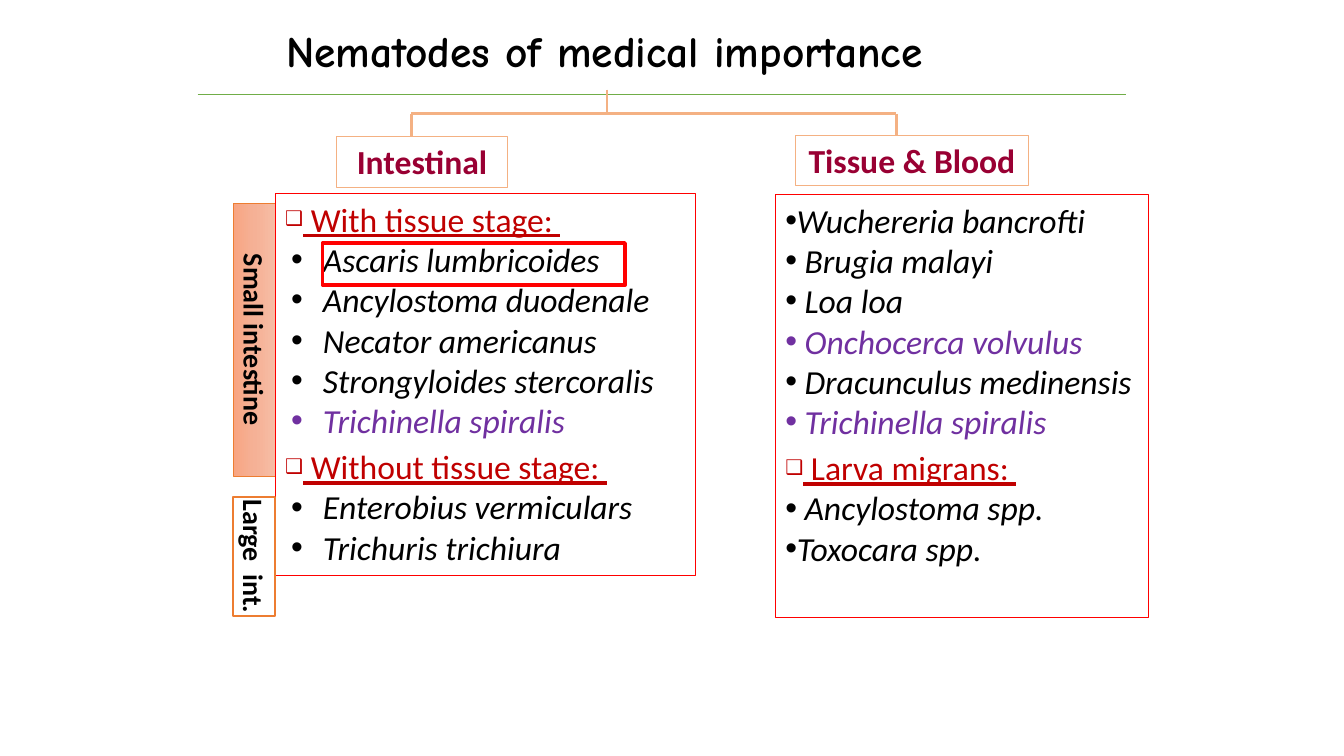
import copy

import pptx
import pptx.dml.color
import pptx.enum.shapes
import pptx.enum.text
import pptx.oxml
import pptx.oxml.ns
import pptx.util

Inches = pptx.util.Inches
Pt = pptx.util.Pt
RGBColor = pptx.dml.color.RGBColor
PP_ALIGN = pptx.enum.text.PP_ALIGN

BLACK = RGBColor(0x00, 0x00, 0x00)
RED = RGBColor(0xFF, 0x00, 0x00)
HEADING_RED = RGBColor(0xC0, 0x00, 0x00)
MAROON = RGBColor(0x99, 0x00, 0x33)
PURPLE = RGBColor(0x70, 0x30, 0xA0)
GREEN = RGBColor(0x70, 0xAD, 0x47)
PEACH = RGBColor(0xF4, 0xB1, 0x83)
ORANGE = RGBColor(0xED, 0x7D, 0x31)
SALMON_STOPS = [
    (0, RGBColor(0xF7, 0xBD, 0xA5)),
    (0.5, RGBColor(0xF5, 0xB1, 0x96)),
    (1, RGBColor(0xF8, 0xA5, 0x82)),
]

INTESTINAL = [
    ("heading", " With tissue stage: "),
    ("species", " Ascaris lumbricoides"),
    ("species", " Ancylostoma duodenale"),
    ("species", " Necator americanus"),
    ("species", " Strongyloides stercoralis"),
    ("shared", " Trichinella spiralis"),
    ("heading", " Without tissue stage: "),
    ("species", " Enterobius vermiculars"),
    ("species", " Trichuris trichiura"),
]
TISSUE_AND_BLOOD = [
    ("species", "Wuchereria bancrofti"),
    ("species", " Brugia malayi"),
    ("species", " Loa loa"),
    ("shared", " Onchocerca volvulus"),
    ("species", " Dracunculus medinensis"),
    ("shared", " Trichinella spiralis"),
    ("heading", " Larva migrans: "),
    ("species", " Ancylostoma spp."),
    ("species", "Toxocara spp."),
]
STYLES = {
    "heading": dict(color=HEADING_RED, underline=True),
    "species": dict(color=BLACK, italic=True),
    "shared": dict(color=PURPLE, italic=True),
}


def write(paragraph, text, size=24, font="Calibri", color=BLACK, bold=False,
          italic=False, underline=False, align=PP_ALIGN.LEFT):
    paragraph.alignment = align
    run = paragraph.add_run()
    run.text = text
    run.font.size = Pt(size)
    run.font.name = font
    run.font.color.rgb = color
    run.font.bold = bold
    run.font.italic = italic
    run.font.underline = underline


def add_line(slide, start, end, color, width):
    line = slide.shapes.add_connector(
        pptx.enum.shapes.MSO_CONNECTOR.STRAIGHT,
        *(Inches(value) for value in (*start, *end)))
    line.line.color.rgb = color
    line.line.width = Pt(width)
    properties = line._element.spPr
    properties.append(pptx.oxml.parse_xml(
        f"<a:effectLst {pptx.oxml.ns.nsdecls('a')}/>"))


def add_frame(slide, box, color, width):
    """Add an unfilled rectangle whose text starts at the top left."""
    frame = slide.shapes.add_shape(
        pptx.enum.shapes.MSO_SHAPE.RECTANGLE, *(Inches(value) for value in box))
    frame.shadow.inherit = False
    frame.fill.background()
    frame.line.color.rgb = color
    frame.line.width = Pt(width)
    frame.text_frame.word_wrap = True
    frame.text_frame.vertical_anchor = pptx.enum.text.MSO_ANCHOR.TOP
    return frame


def add_title(slide, box):
    left, top, width, height = box
    add_line(slide, (1.96, top + 0.75), (11.17, top + 0.75), GREEN, 1)
    title = slide.shapes.add_textbox(*(Inches(value) for value in box))
    title.text_frame.word_wrap = True
    write(title.text_frame.paragraphs[0], "Nematodes of medical importance",
          size=31, font="Comic Neue", bold=True)


def add_branches(slide, box, trunk):
    """Draw a trunk from the top of the box to a bar with a drop at each end."""
    left, top, width, height = box
    right, bottom, bar = left + width, top + height, top + 0.24
    for start, end in [
        ((trunk, top), (trunk, bar)),
        ((left, bar), (right, bar)),
        ((left, bar), (left, bottom)),
        ((right, bar), (right, bottom)),
    ]:
        add_line(slide, start, end, PEACH, 2)


def add_group_label(slide, box, text):
    label = add_frame(slide, box, PEACH, 0.75)
    write(label.text_frame.paragraphs[0], text, color=MAROON, bold=True,
          align=PP_ALIGN.CENTER)


def add_bullet(paragraph, character, percent, margin, hanging):
    properties = paragraph._p.get_or_add_pPr()
    properties.set("marL", str(Inches(margin)))
    properties.set("indent", str(-Inches(hanging)))
    namespace = pptx.oxml.ns.nsdecls("a")
    for element in (f'buSzPct {namespace} val="{percent * 1000}"',
                    f'buFont {namespace} typeface="Arial"',
                    f'buChar {namespace} char="{character}"'):
        properties.append(pptx.oxml.parse_xml(f"<a:{element}/>"))


def add_species_list(slide, box, entries, margin=0, hanging=0):
    text_frame = add_frame(slide, box, RED, 0.75).text_frame
    for index, (style, text) in enumerate(entries):
        paragraph = text_frame.add_paragraph() if index else text_frame.paragraphs[0]
        if style == "heading":
            add_bullet(paragraph, "❑", 60, 0, 0)
            if index:
                paragraph.space_before = Pt(4)
        else:
            add_bullet(paragraph, "•", 100, margin, hanging)
        write(paragraph, text, **STYLES[style])


def add_side_label(slide, box, text, line_width, stops=()):
    """Add a label turned a quarter clockwise; box is its place before turning."""
    label = add_frame(slide, box, ORANGE, line_width)
    label.rotation = 90
    if stops:
        label.fill.gradient()
        label.fill.gradient_angle = 270
        stop_list = label._element.spPr.find(
            f".//{pptx.oxml.ns.qn('a:gsLst')}")
        stop_list.append(copy.deepcopy(stop_list[0]))
        for stop, (position, color) in zip(label.fill.gradient_stops, stops):
            stop.position = position
            stop.color.rgb = color
    text_frame = label.text_frame
    text_frame.margin_left = text_frame.margin_right = Inches(0.01)
    text_frame.margin_top = text_frame.margin_bottom = Inches(0.04)
    write(text_frame.paragraphs[0], text, size=20, bold=True,
          align=PP_ALIGN.CENTER)


def main():
    presentation = pptx.Presentation()
    presentation.slide_width = Inches(13.33)
    presentation.slide_height = Inches(7.5)
    slide = presentation.slides.add_slide(presentation.slide_layouts[6])

    add_title(slide, (2.74, 0.19, 7.55, 0.62))
    add_branches(slide, (4.08, 0.89, 4.81, 0.46), trunk=6.02)
    add_group_label(slide, (3.34, 1.35, 1.69, 0.51), "Intestinal")
    add_group_label(slide, (7.89, 1.34, 2.31, 0.5), "Tissue & Blood")
    add_side_label(slide, (1.17, 3.16, 2.71, 0.42), "Small intestine", 0.5,
                   SALMON_STOPS)
    add_species_list(slide, (2.73, 1.92, 4.17, 3.79), INTESTINAL,
                     margin=0.3, hanging=0.24)
    add_species_list(slide, (7.69, 1.93, 3.7, 4.2), TISSUE_AND_BLOOD)
    add_side_label(slide, (1.93, 5.31, 1.18, 0.42), "Large  int.", 1.25)
    add_frame(slide, (3.2, 2.41, 3, 0.42), RED, 2.5)

    presentation.save("out.pptx")


if __name__ == "__main__":
    main()
